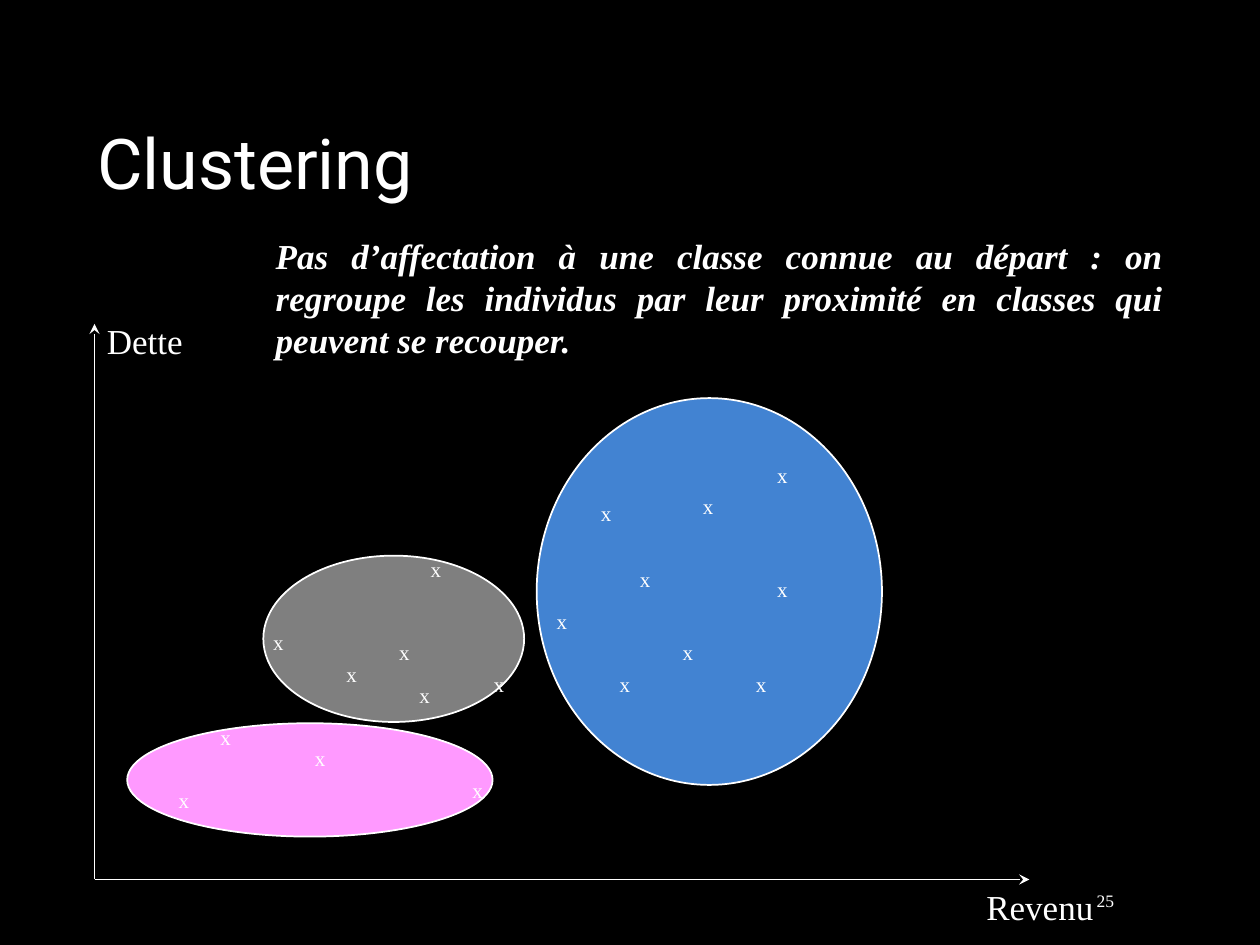
from lxml import etree
from pptx import Presentation
from pptx import util as u
from pptx.dml.color import RGBColor
from pptx.enum import shapes, text
from pptx.oxml.ns import qn

CELL = 0.1  # inches: the slide is a grid of 100 columns by 75 rows
COLUMNS, ROWS = 100, 75


def cells(*counts):
    return [u.Inches(count * CELL) for count in counts]


def color(hex_code):
    return RGBColor.from_string(hex_code)


def write(frame, words, size=20, font="Times New Roman", ink="FFFFFF", bold=False,
          italic=False, align=text.PP_ALIGN.LEFT, anchor=text.MSO_ANCHOR.TOP,
          wrap=True, spacing=None):
    frame.word_wrap = wrap
    frame.auto_size = text.MSO_AUTO_SIZE.NONE
    frame.vertical_anchor = anchor
    paragraph = frame.paragraphs[0]
    paragraph.alignment = align
    if spacing:
        paragraph.line_spacing = spacing
    run = paragraph.add_run()
    run.text = words
    run.font.size, run.font.name = u.Pt(size), font
    run.font.bold, run.font.italic = bold, italic
    run.font.color.rgb = color(ink)


class ClusterSlide:
    ground, ink, line_width = "000000", "FFFFFF", u.Pt(1)

    def __init__(self, deck):
        self.slide = deck.slides.add_slide(deck.slide_layouts[5])
        self.slide.background.fill.solid()
        self.slide.background.fill.fore_color.rgb = color(self.ground)

    def stroke(self, line):
        line.color.rgb = color(self.ink)
        line.width = self.line_width

    def title(self, words, left, top, width, height):
        heading = self.slide.shapes.title
        heading.left, heading.top, heading.width, heading.height = cells(
            left, top, width, height)
        write(heading.text_frame, words, size=40, font="Roboto", spacing=0.8,
              anchor=text.MSO_ANCHOR.BOTTOM)

    def label(self, words, left, top, width, height, **style):
        box = self.slide.shapes.add_textbox(*cells(left, top, width, height))
        write(box.text_frame, words, **style)

    def cluster(self, left, top, width, height, fill):
        oval = self.slide.shapes.add_shape(
            shapes.MSO_SHAPE.OVAL, *cells(left, top, width, height))
        oval.shadow.inherit = False
        oval.fill.solid()
        oval.fill.fore_color.rgb = color(fill)
        self.stroke(oval.line)

    def axis(self, start, end):
        arrow = self.slide.shapes.add_connector(
            shapes.MSO_CONNECTOR.STRAIGHT, *cells(*start, *end))
        self.stroke(arrow.line)
        etree.SubElement(arrow.line._get_or_add_ln(), qn("a:tailEnd"), type="stealth")
        etree.SubElement(arrow._element.spPr, qn("a:effectLst"))

    def individual(self, left, top):
        self.label("x", left, top, 2.8, 3, size=12, wrap=False)


CLUSTERS = [
    (10.1, 57.4, 29, 9, "FF99FF"),
    (20.9, 44.1, 20.7, 13.2, "7F7F7F"),
    (42.6, 31.6, 27.4, 30.7, "4283D2"),
]
INDIVIDUALS = [
    # pink cluster
    (13.2, 62), (16.5, 57), (24, 58.7), (36.5, 61.2),
    # grey cluster
    (20.7, 49.5), (26.5, 52), (30.7, 50.3), (32.3, 53.7), (33.2, 43.7), (38.2, 52.8),
    # blue cluster
    (43.2, 47.8), (46.7, 39.2), (48.2, 52.8), (49.8, 44.5), (53.2, 50.3),
    (54.8, 38.7), (59, 52.8), (60.7, 36.2), (60.7, 45.3),
]
ORIGIN = (7.5, 69.8)


def main():
    deck = Presentation()
    deck.slide_width, deck.slide_height = cells(COLUMNS, ROWS)
    page = ClusterSlide(deck)
    page.title("Clustering", 6.7, 4.2, 86.6, 12.4)
    page.label("25", 79.4, 70, 10, 3, size=10, align=text.PP_ALIGN.RIGHT,
               anchor=text.MSO_ANCHOR.MIDDLE)
    for cluster in CLUSTERS:
        page.cluster(*cluster)
    page.axis(ORIGIN, (ORIGIN[0], 25.7))
    page.axis(ORIGIN, (81.7, ORIGIN[1]))
    for place in INDIVIDUALS:
        page.individual(*place)
    page.label("Revenu", 77.3, ORIGIN[1], 10.6, 4.4, wrap=False)
    page.label("Dette", ORIGIN[0], 24.9, 8.1, 4.4, wrap=False)
    page.label("Pas d’affectation à une classe connue au départ : on regroupe les "
               "individus par leur proximité en classes qui peuvent se recouper.",
               20.9, 18.1, 72.4, 11.1, bold=True, italic=True,
               align=text.PP_ALIGN.JUSTIFY)
    deck.save("out.pptx")


if __name__ == "__main__":
    main()
